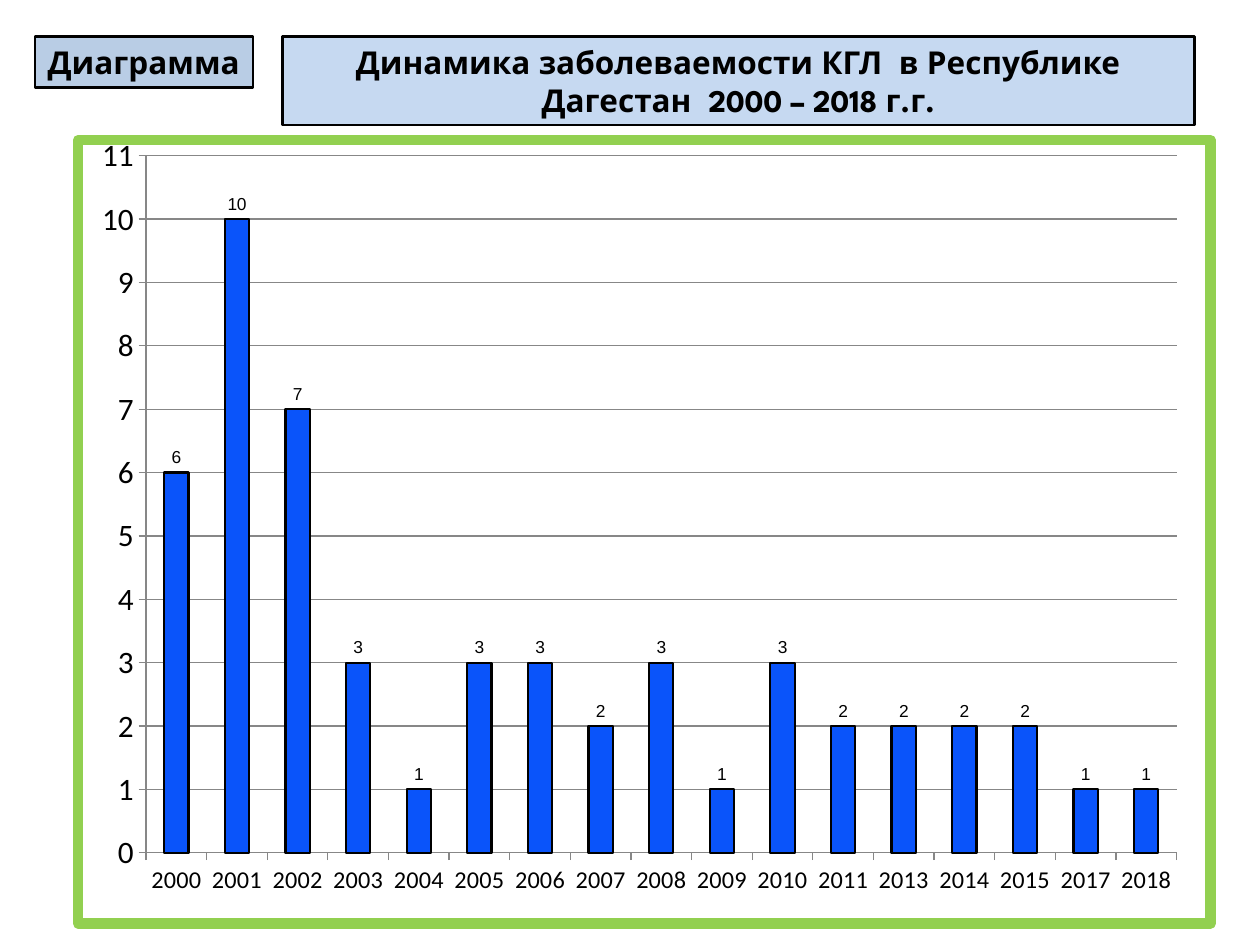
from dataclasses import dataclass

from pptx import Presentation
from pptx.chart.data import CategoryChartData as ChartData
from pptx.dml.color import RGBColor as Rgb
from pptx.enum.chart import XL_CHART_TYPE as Kind, XL_LABEL_POSITION as Spot
from pptx.enum.chart import XL_TICK_MARK as Tick
from pptx.enum.shapes import MSO_SHAPE as Shape
from pptx.enum.text import MSO_ANCHOR as Anchor, MSO_AUTO_SIZE as Fit, PP_ALIGN as Align
from pptx.oxml import parse_xml
from pptx.oxml.ns import nsdecls
from pptx.util import Cm, Pt


@dataclass(frozen=True)
class Theme:
    ink: str = "000000"
    head: str = "C6D9F1"
    tag: str = "B9CDE5"
    bar: str = "0A54FA"
    grid: str = "878787"
    frame: str = "92D050"
    title_font: str = "League Spartan"
    axis_font: str = "Calibri"
    label_font: str = "Arial"
    title_size: int = 18
    value_size: int = 18
    year_size: int = 14
    label_size: int = 10


class Deck:
    def __init__(self, theme):
        self.theme = theme
        self.show = Presentation()
        self.show.slide_width, self.show.slide_height = Cm(25.4), Cm(19.05)
        self.slide = self.show.slides.add_slide(self.show.slide_layouts[5])

    def font(self, font, name, size, bold=False):
        font.name, font.size, font.bold = name, Pt(size), bold
        font.color.rgb = Rgb.from_string(self.theme.ink)

    def line(self, line, color, width):
        line.color.rgb = Rgb.from_string(color)
        line.width = Pt(width)

    def panel(self, shape, box, fill, text, align):
        """Place a filled, outlined panel and write its bold text."""
        shape.left, shape.top, shape.width, shape.height = map(Cm, box)
        shape.fill.solid()
        shape.fill.fore_color.rgb = Rgb.from_string(fill)
        self.line(shape.line, self.theme.ink, 1.5)
        frame = shape.text_frame
        frame.text = text
        frame.word_wrap, frame.auto_size = True, Fit.NONE
        frame.vertical_anchor = Anchor.MIDDLE
        para = frame.paragraphs[0]
        para.alignment = align
        self.font(para.font, self.theme.title_font, self.theme.title_size, True)

    def title(self, box, text):
        self.panel(self.slide.shapes.title, box, self.theme.head, text, Align.CENTER)

    def tag(self, box, text):
        shape = self.slide.shapes.add_shape(Shape.RECTANGLE, *map(Cm, box))
        shape.shadow.inherit = False
        self.panel(shape, box, self.theme.tag, text, Align.LEFT)

    def axis(self, axis, size):
        self.font(axis.tick_labels.font, self.theme.axis_font, size)
        self.line(axis.format.line, self.theme.grid, 0.75)
        axis.major_tick_mark, axis.minor_tick_mark = Tick.OUTSIDE, Tick.NONE

    def chart(self, box, cases, area):
        look = self.theme
        data = ChartData()
        data.categories = list(cases)
        data.add_series("Series 1", cases.values())
        chart = self.slide.shapes.add_chart(
            Kind.COLUMN_CLUSTERED, *map(Cm, box), data).chart
        chart.has_legend = chart.has_title = False
        self.font(chart.font, look.label_font, look.label_size)

        # Axes and grid
        self.axis(chart.category_axis, look.year_size)
        axis = chart.value_axis
        self.axis(axis, look.value_size)
        axis.minimum_scale, axis.maximum_scale, axis.major_unit = 0, 11, 1
        axis.has_major_gridlines = True
        self.line(axis.major_gridlines.format.line, look.grid, 0.75)

        # Bars and their values
        plot = chart.plots[0]
        plot.gap_width, plot.vary_by_categories = 150, False
        bars = plot.series[0].format
        bars.fill.solid()
        bars.fill.fore_color.rgb = Rgb.from_string(look.bar)
        self.line(bars.line, look.ink, 1.25)
        plot.has_data_labels = True
        labels = plot.data_labels
        labels.show_value, labels.position = True, Spot.OUTSIDE_END
        self.font(labels.font, look.label_font, look.label_size)

        self.border(chart)
        self.area(chart, area)

    def border(self, chart):
        root = chart._chartSpace.xpath("c:chart")[0]
        root.addnext(parse_xml(
            f'<c:spPr {nsdecls("c", "a")}><a:noFill/><a:ln w="{Pt(6)}"><a:solidFill>'
            f'<a:srgbClr val="{self.theme.frame}"/></a:solidFill></a:ln></c:spPr>'))

    def area(self, chart, area):
        """Fix the inner plot area as shares of the chart."""
        plot = chart._chartSpace.xpath("c:chart/c:plotArea")[0]
        for old in plot.xpath("c:layout"):
            plot.remove(old)
        modes = "".join(f'<c:{key}Mode val="edge"/>' for key in "xy")
        sides = "".join(f'<c:{key} val="{val}"/>' for key, val in zip("xywh", area))
        plot.insert(0, parse_xml(
            f'<c:layout {nsdecls("c")}><c:manualLayout><c:layoutTarget val="inner"/>'
            f'{modes}{sides}</c:manualLayout></c:layout>'))


def main():
    deck = Deck(Theme())

    # Heading row
    deck.title((5.69, 0.74, 18.39, 1.78),
               "Динамика заболеваемости КГЛ  в Республике Дагестан  2000 – 2018 г.г.")
    deck.tag((0.71, 0.74, 4.39, 1.02), "Диаграмма")

    # Cases by year
    years = [*range(2000, 2012), 2013, 2014, 2015, 2017, 2018]
    counts = [6, 10, 7, 3, 1, 3, 3, 2, 3, 1, 3, 2, 2, 2, 2, 1, 1]
    deck.chart((1.47, 2.72, 23.04, 16),
               dict(zip(map(str, years), counts)), (0.06, 0.02, 0.91, 0.89))

    deck.show.save("out.pptx")


if __name__ == "__main__":
    main()
